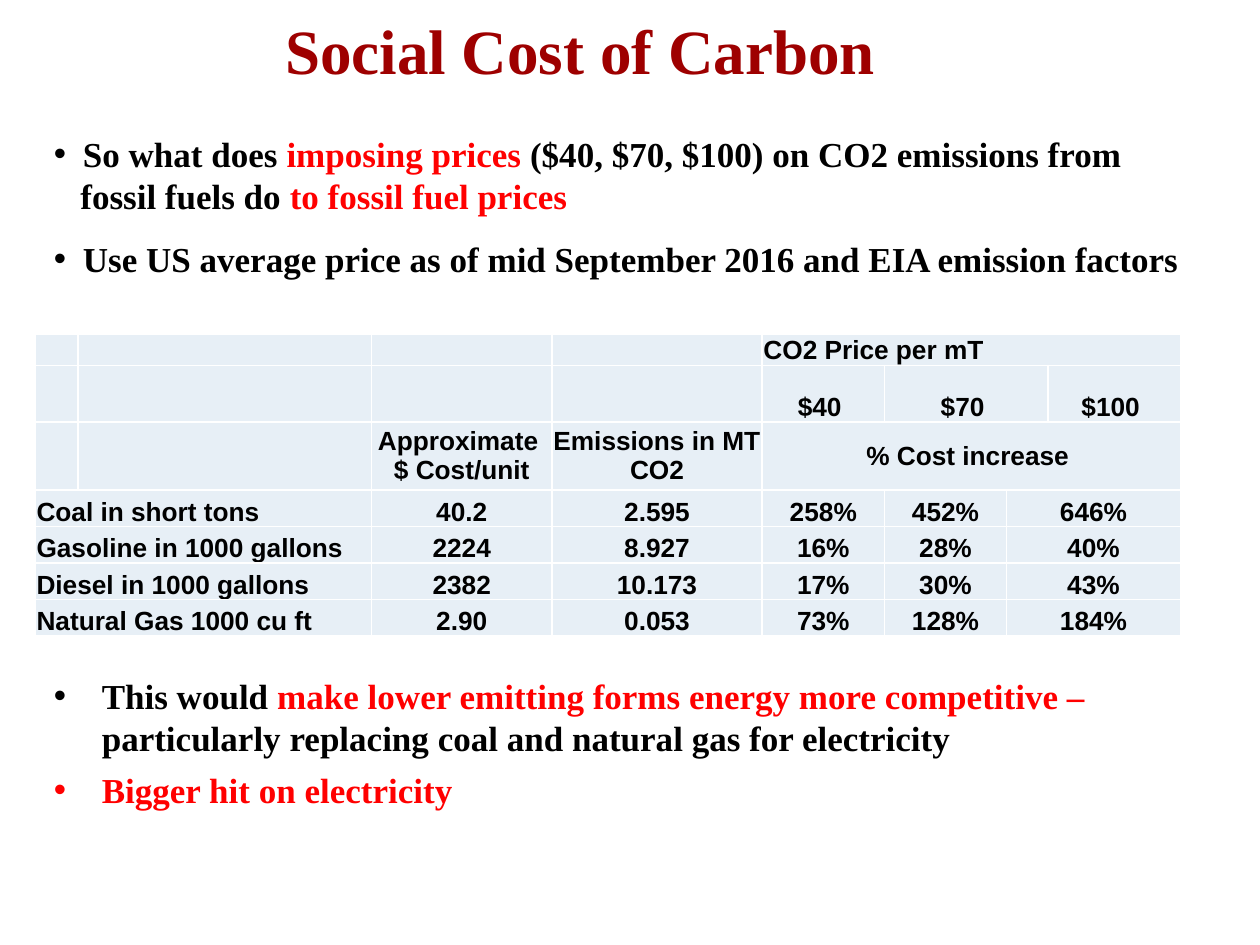
from dataclasses import dataclass
from typing import NamedTuple

from lxml import etree
from pptx import Presentation
from pptx.dml.color import RGBColor
from pptx.enum.text import MSO_ANCHOR, MSO_AUTO_SIZE, PP_ALIGN
from pptx.oxml.ns import qn
from pptx.util import Inches, Pt

LEFT, CENTER = PP_ALIGN.LEFT, PP_ALIGN.CENTER
MIDDLE, BOTTOM = MSO_ANCHOR.MIDDLE, MSO_ANCHOR.BOTTOM
GROW, FIXED = MSO_AUTO_SIZE.SHAPE_TO_FIT_TEXT, MSO_AUTO_SIZE.NONE


@dataclass(frozen=True)
class Theme:
    serif: str = "Times New Roman"
    sans: str = "Arial"
    title: str = "9E0000"
    ink: str = "000000"
    accent: str = "FF0000"
    cell: str = "E7EFF6"
    rule: str = "FFFFFF"
    title_size: int = 36
    body_size: int = 20
    cell_size: int = 15


THEME = Theme()


class Phrase(NamedTuple):
    text: str
    color: str = THEME.ink


class Item(NamedTuple):
    phrases: list[Phrase]
    indent: float
    bullet: bool = True
    before: int = 0
    after: int = 0


class Entry(NamedTuple):
    row: int
    col: int
    text: str
    span: int = 1
    align: PP_ALIGN = CENTER
    anchor: MSO_ANCHOR = BOTTOM


INTRO = [
    Item([Phrase("So what does "), Phrase("imposing prices", THEME.accent),
          Phrase(" ($40, $70, $100) on CO2 emissions from")], 0.23),
    Item([Phrase("fossil fuels do"), Phrase(" to fossil fuel prices", THEME.accent)],
         0.21, bullet=False),
    Item([Phrase("Use US average price as of mid September 2016 and EIA emission factors")],
         0.23, before=12),
]
CLOSING = [
    Item([Phrase("This would "),
          Phrase("make lower emitting forms energy more competitive – ", THEME.accent),
          Phrase("particularly replacing coal and natural gas for electricity")],
         0.38, after=6),
    Item([Phrase("Bigger hit on electricity", THEME.accent)], 0.38),
]

COLS = [0.34, 2.33, 1.43, 1.67, 0.97, 0.97, 0.33, 1.05]
ROWS = [0.25, 0.45, 0.54] + [0.29] * 4
HEADS = [
    Entry(0, 4, "CO2 Price per mT", 4, LEFT),
    Entry(1, 4, "$40 "),
    Entry(1, 5, "$70 ", 2),
    Entry(1, 7, "$100 "),
    Entry(2, 2, "Approximate \n$ Cost/unit", anchor=MIDDLE),
    Entry(2, 3, "Emissions in MT CO2", anchor=MIDDLE),
    Entry(2, 4, "% Cost increase ", 4, anchor=MIDDLE),
]
FUELS = [
    ("Coal in short tons", "40.2", "2.595", "258%", "452%", "646%"),
    ("Gasoline in 1000 gallons", "2224", "8.927", "16%", "28%", "40%"),
    ("Diesel in 1000 gallons", "2382", "10.173", "17%", "30%", "43%"),
    ("Natural Gas 1000 cu ft", "2.90", "0.053", "73%", "128%", "184%"),
]
FUEL_COLS = [0, 2, 3, 4, 5, 6]
WIDE_COLS = (0, 6)


def style(run, font: str, size: int, color: str) -> None:
    run.font.name = font
    run.font.size = Pt(size)
    run.font.bold = True
    run.font.color.rgb = RGBColor.from_string(color)


def add_box(slide, left: float, top: float, width: float, height: float,
            wrap: bool = True, fit: MSO_AUTO_SIZE = GROW):
    box = slide.shapes.add_textbox(
        Inches(left), Inches(top), Inches(width), Inches(height))
    frame = box.text_frame
    frame.word_wrap = wrap
    frame.auto_size = fit
    return frame


def add_title(slide, text: str) -> None:
    frame = add_box(slide, 2.14, 0.04, 4.93, 0.71, wrap=False)
    frame.text = text
    line = frame.paragraphs[0]
    line.alignment = CENTER
    style(line.runs[0], THEME.serif, THEME.title_size, THEME.title)


def indent(line, depth: float, bullet: bool) -> None:
    """Indent a paragraph, hanging its bullet if it has one."""
    props = line._p.get_or_add_pPr()
    props.set("marL", str(Inches(depth)))
    props.set("indent", str(-Inches(depth) if bullet else 0))
    if bullet:
        etree.SubElement(props, qn("a:buFont"), typeface=THEME.sans)
        etree.SubElement(props, qn("a:buChar"), char="•")


def fill_list(frame, items: list[Item]) -> None:
    for i, item in enumerate(items):
        line = frame.add_paragraph() if i else frame.paragraphs[0]
        line.space_before, line.space_after = Pt(item.before), Pt(item.after)
        indent(line, item.indent, item.bullet)
        for phrase in item.phrases:
            run = line.add_run()
            run.text = phrase.text
            style(run, THEME.serif, THEME.body_size, phrase.color)


def dress(cell) -> None:
    """Give a cell its margins, borders, fill and empty-line size."""
    cell.margin_left = cell.margin_right = Inches(0.01)
    cell.margin_top = cell.margin_bottom = 0
    props = cell._tc.get_or_add_tcPr()
    for side in ("lnL", "lnR", "lnT", "lnB"):
        edge = etree.SubElement(props, qn(f"a:{side}"), w=str(Pt(1)))
        paint = etree.SubElement(edge, qn("a:solidFill"))
        etree.SubElement(paint, qn("a:srgbClr"), val=THEME.rule)
    cell.fill.solid()
    cell.fill.fore_color.rgb = RGBColor.from_string(THEME.cell)
    end = cell.text_frame.paragraphs[0]._p.get_or_add_endParaRPr()
    end.set("sz", str(THEME.cell_size * 100))


def put(table, entry: Entry) -> None:
    cell = table.cell(entry.row, entry.col)
    if entry.span > 1:
        cell.merge(table.cell(entry.row, entry.col + entry.span - 1))
    cell.vertical_anchor = entry.anchor
    cell.text_frame.text = entry.text
    for line in cell.text_frame.paragraphs:
        line.alignment = entry.align
        for run in line.runs:
            style(run, THEME.sans, THEME.cell_size, THEME.ink)


def add_costs(slide) -> None:
    table = slide.shapes.add_table(
        len(ROWS), len(COLS), Inches(0.28), Inches(2.65),
        Inches(sum(COLS)), Inches(sum(ROWS))).table
    table.first_row = table.horz_banding = False
    for col, width in zip(table.columns, COLS):
        col.width = Inches(width)
    for row, height in zip(table.rows, ROWS):
        row.height = Inches(height)
    for cell in table.iter_cells():
        dress(cell)
    fuels = [
        Entry(row, col, text, 2 if col in WIDE_COLS else 1, CENTER if col else LEFT)
        for row, fuel in enumerate(FUELS, start=3)
        for col, text in zip(FUEL_COLS, fuel)
    ]
    for entry in HEADS + fuels:
        put(table, entry)


def main() -> None:
    deck = Presentation()
    deck.slide_width, deck.slide_height = Inches(10), Inches(7.5)
    slide = deck.slides.add_slide(deck.slide_layouts[6])
    add_title(slide, "Social Cost of Carbon")
    fill_list(add_box(slide, 0.33, 1, 9.44, 3.87, fit=FIXED), INTRO)
    add_costs(slide)
    fill_list(add_box(slide, 0.33, 5.3, 9.33, 1.19), CLOSING)
    deck.save("out.pptx")


if __name__ == "__main__":
    main()
